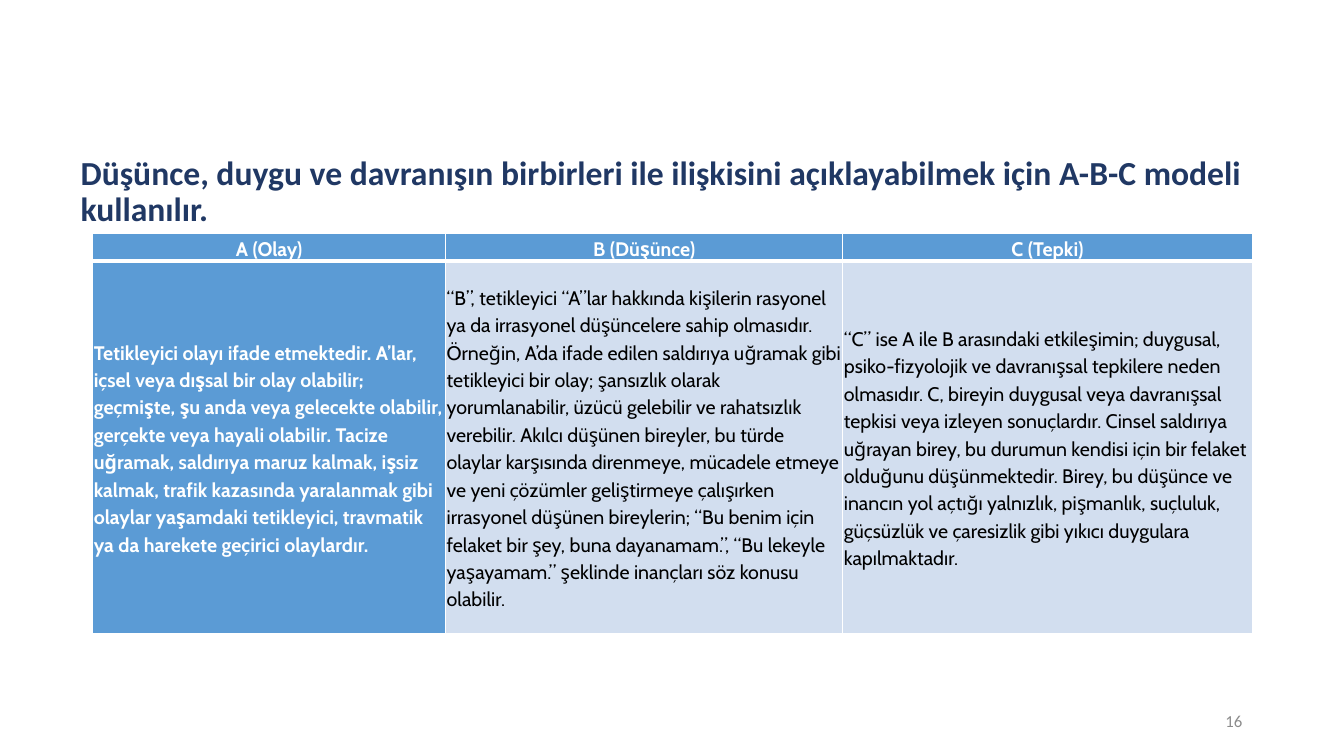
from pptx import Presentation
from pptx.dml.color import RGBColor
from pptx.enum import text as t
from pptx.oxml import parse_xml
from pptx.oxml.ns import nsdecls
from pptx.util import Pt

PX = 9144  # 100 px to the inch
NAVY = RGBColor(0x20, 0x38, 0x64)
BLUE = RGBColor(0x5B, 0x9B, 0xD5)
PALE = RGBColor(0xD2, 0xDE, 0xEF)
GREY = RGBColor(0x8C, 0x8C, 0x8C)
WHITE = RGBColor(0xFF, 0xFF, 0xFF)
BLACK = RGBColor(0, 0, 0)

HEADING = ("Düşünce, duygu ve davranışın birbirleri ile ilişkisini açıklayabilmek "
           "için A-B-C modeli kullanılır.")
ABC_ROWS = [
    ["A (Olay)", "B (Düşünce)", "C (Tepki)"],
    ["Tetikleyici olayı ifade etmektedir. A’lar, içsel veya dışsal bir olay olabilir; "
     "geçmişte, şu anda veya gelecekte olabilir, gerçekte veya hayali olabilir. Tacize "
     "uğramak, saldırıya maruz kalmak, işsiz kalmak, trafik kazasında yaralanmak gibi "
     "olaylar yaşamdaki tetikleyici, travmatik ya da harekete geçirici olaylardır.",
     "“B”, tetikleyici “A”lar hakkında kişilerin rasyonel ya da irrasyonel düşüncelere "
     "sahip olmasıdır. Örneğin, A’da ifade edilen saldırıya uğramak gibi tetikleyici bir "
     "olay; şansızlık olarak yorumlanabilir, üzücü gelebilir ve rahatsızlık verebilir. "
     "Akılcı düşünen bireyler, bu türde olaylar karşısında direnmeye, mücadele etmeye ve "
     "yeni çözümler geliştirmeye çalışırken irrasyonel düşünen bireylerin; “Bu benim için "
     "felaket bir şey, buna dayanamam.”, “Bu lekeyle yaşayamam.” şeklinde inançları söz "
     "konusu olabilir.",
     "“C” ise A ile B arasındaki etkileşimin; duygusal, psiko-fizyolojik ve davranışsal "
     "tepkilere neden olmasıdır. C, bireyin duygusal veya davranışsal tepkisi veya izleyen "
     "sonuçlardır. Cinsel saldırıya uğrayan birey, bu durumun kendisi için bir felaket "
     "olduğunu düşünmektedir. Birey, bu düşünce ve inancın yol açtığı yalnızlık, "
     "pişmanlık, suçluluk, güçsüzlük ve çaresizlik gibi yıkıcı duygulara kapılmaktadır."],
]


def emu(*lengths):
    return [n * PX for n in lengths]


def set_font(p, name, size, color, bold=False):
    f = p.font
    f.name, f.size, f.bold = name, Pt(size), bold
    f.color.rgb = color


def add_heading(s, box):
    sp = s.shapes.title
    sp.left, sp.top, sp.width, sp.height = emu(*box)
    tf = sp.text_frame
    tf.text = HEADING
    tf.word_wrap = True
    tf.auto_size = t.MSO_AUTO_SIZE.NONE
    tf.vertical_anchor = t.MSO_ANCHOR.BOTTOM
    p = tf.paragraphs[0]
    p.alignment = t.PP_ALIGN.LEFT
    p.line_spacing = 0.9
    set_font(p, "Calibri", 24, NAVY, True)


def set_borders(cell, **widths):
    """Draw white cell borders, with a width in points for each side."""
    tc_pr = cell._tc.get_or_add_tcPr()
    for i, (side, width) in enumerate(widths.items()):
        tc_pr.insert(i, parse_xml(
            f'<a:ln{side} {nsdecls("a")} w="{Pt(width)}"><a:solidFill>'
            f'<a:srgbClr val="{WHITE}"/></a:solidFill></a:ln{side}>'))


def fill_cell(cell, words, is_header, is_first):
    strong = is_header or is_first
    cell.text = words
    cell.margin_left = cell.margin_right = PX
    cell.margin_top = cell.margin_bottom = 0
    cell.vertical_anchor = t.MSO_ANCHOR.TOP if is_header else t.MSO_ANCHOR.MIDDLE
    cell.fill.solid()
    cell.fill.fore_color.rgb = BLUE if strong else PALE
    p = cell.text_frame.paragraphs[0]
    p.alignment = t.PP_ALIGN.CENTER if is_header else t.PP_ALIGN.LEFT
    p.line_spacing = 1.15
    p.space_after = Pt(8)
    set_font(p, "Cabin", 14, WHITE if strong else BLACK, strong)
    set_borders(cell, L=1, R=1, T=1 if is_header else 3, B=3 if is_header else 1)


def add_abc_table(s, box):
    table = s.shapes.add_table(2, 3, *emu(*box)).table
    for column, width in zip(table.columns, emu(350, 394, 406)):
        column.width = width
    for row, height in zip(table.rows, emu(22, 369)):
        row.height = height
    for r, row in enumerate(ABC_ROWS):
        for c, words in enumerate(row):
            fill_cell(table.cell(r, c), words, r == 0, c == 0)


def add_page_number(s, box):
    tf = s.shapes.add_textbox(*emu(*box)).text_frame
    tf.text = "16"
    tf.word_wrap = True
    tf.vertical_anchor = t.MSO_ANCHOR.MIDDLE
    p = tf.paragraphs[0]
    p.alignment = t.PP_ALIGN.RIGHT
    set_font(p, "Calibri", 12, GREY)


def main():
    prs = Presentation()
    prs.slide_width, prs.slide_height = emu(1333, 750)
    s = prs.slides.add_slide(prs.slide_layouts[5])
    add_heading(s, (70, 142, 1194, 90))
    add_abc_table(s, (92, 232, 1150, 391))
    add_page_number(s, (942, 695, 300, 40))
    prs.save("out.pptx")


if __name__ == "__main__":
    main()
